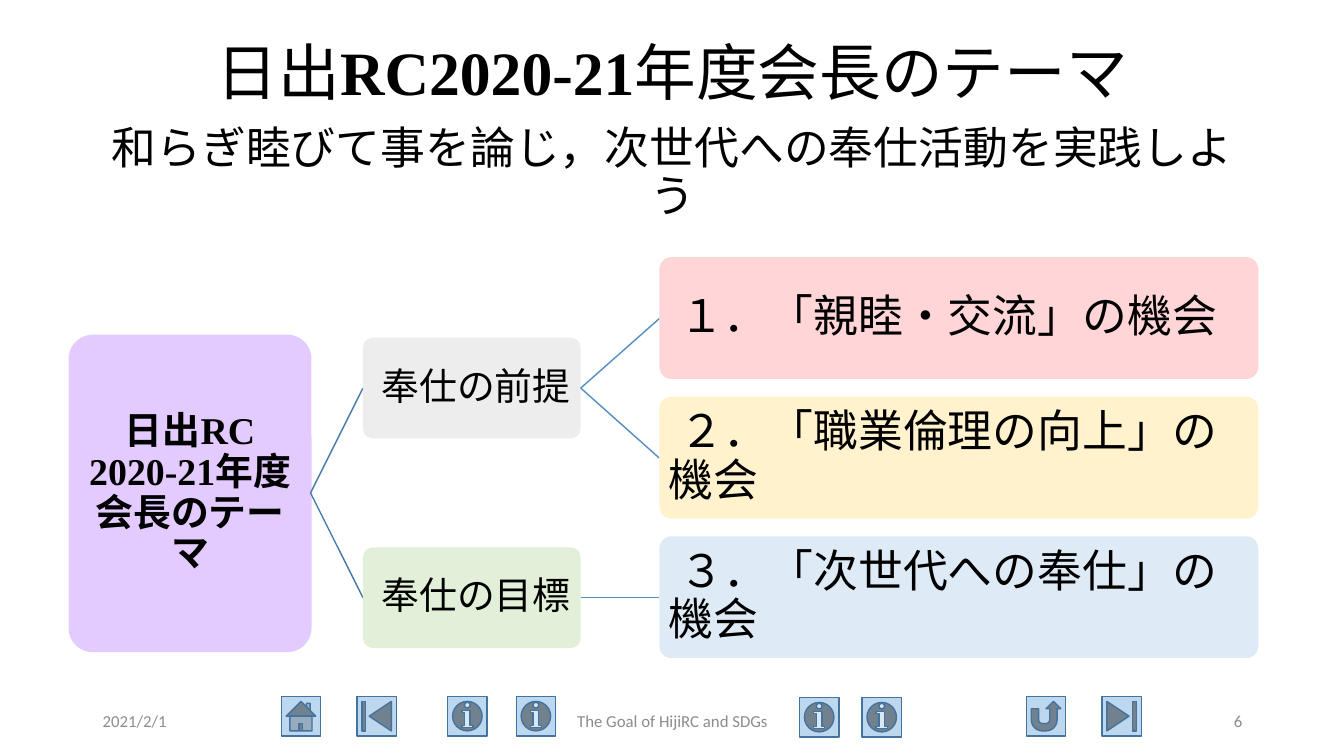
from lxml import etree
from pptx import Presentation
from pptx import util as u
from pptx.dml.color import RGBColor
from pptx.enum import shapes, text
from pptx.oxml.ns import qn

SHAPE = shapes.MSO_SHAPE
ALIGN = text.PP_ALIGN
SERIF = "Times New Roman"


def rgb(value):
    """Turn a hex string into a colour."""
    return RGBColor.from_string(value)


def add_paragraph(tf, runs, size=32, color="000000", align=ALIGN.LEFT,
                  spacing=0.9, before=0, font="Calibri", bold=False):
    """Add a paragraph of text, or of (text, font, bold) runs."""
    first = tf.paragraphs[0]
    p = tf.add_paragraph() if first.runs else first
    p.alignment, p.line_spacing, p.space_before = align, spacing, u.Pt(before)
    if isinstance(runs, str):
        runs = [(runs, font, bold)]
    for words, face, heavy in runs:
        r = p.add_run()
        r.text = words
        r.font.name, r.font.bold, r.font.size = face, heavy, u.Pt(size)
        r.font.color.rgb = rgb(color)


def set_frame(tf, inset_x, inset_y):
    """Wrap and centre a text frame vertically with the given insets."""
    tf.word_wrap = True
    tf.vertical_anchor = text.MSO_ANCHOR.MIDDLE
    tf.margin_left = tf.margin_right = u.Inches(inset_x)
    tf.margin_top = tf.margin_bottom = u.Inches(inset_y)
    return tf


def add_text_box(slide, left, top, width, height):
    """Add an empty text box and return its frame."""
    sp = slide.shapes.add_textbox(*map(u.Inches, (left, top, width, height)))
    return set_frame(sp.text_frame, 0.1, 0.05)


def add_shape(slide, kind, box, fill, line=None):
    """Add a filled preset shape."""
    sp = slide.shapes.add_shape(kind, *map(u.Inches, box))
    sp.shadow.inherit = False
    sp.fill.solid()
    sp.fill.fore_color.rgb = rgb(fill)
    if line:
        sp.line.color.rgb = rgb(line)
        sp.line.width = u.Pt(1)
    else:
        sp.line.fill.background()
    return sp


def add_node(slide, box, fill, lines, inset=0.06, **fmt):
    """Add a rounded tree node holding lines of text."""
    sp = add_shape(slide, SHAPE.ROUNDED_RECTANGLE, box, fill)
    sp.adjustments[0] = 0.1
    tf = set_frame(sp.text_frame, inset, inset)
    for line in lines:
        add_paragraph(tf, line, **fmt)


def add_branch(slide, x1, y1, x2, y2, color):
    """Draw a straight branch between two nodes."""
    c = slide.shapes.add_connector(shapes.MSO_CONNECTOR.STRAIGHT,
                                   *map(u.Inches, (x1, y1, x2, y2)))
    c.line.color.rgb = rgb(color)
    c.line.width = u.Pt(1)
    etree.SubElement(c._element.spPr, qn("a:effectLst"))


def add_buttons(slide):
    """Add the row of navigation buttons."""
    info = SHAPE.ACTION_BUTTON_INFORMATION
    for kind, left, top in [
        (SHAPE.ACTION_BUTTON_HOME, 2.79, 6.91),
        (SHAPE.ACTION_BUTTON_BEGINNING, 3.54, 6.91),
        (SHAPE.ACTION_BUTTON_RETURN, 10.18, 6.91),
        (SHAPE.ACTION_BUTTON_END, 10.93, 6.91),
        (info, 4.44, 6.91), (info, 5.12, 6.91),
        (info, 7.93, 6.92), (info, 8.55, 6.92),
    ]:
        add_shape(slide, kind, (left, top, 0.39, 0.39), "BDD7EE", "43739E")


def add_title(slide):
    """Add the heading and the theme below it."""
    tf = add_text_box(slide, 0.92, 0.4, 11.5, 1.82)
    heading = [("日出", "Calibri", False), ("RC2020-21", SERIF, True),
               ("年度会長のテーマ", "Calibri", False)]
    add_paragraph(tf, heading, size=44, align=ALIGN.CENTER)
    add_paragraph(tf, "和らぎ睦びて事を論じ，次世代への奉仕活動を実践しよう",
                  align=ALIGN.CENTER, before=12)


def add_footer(slide):
    """Add the date, footer and slide number."""
    for words, left, width, align in [
        ("2021/2/1", 0.92, 3, ALIGN.LEFT),
        ("The Goal of HijiRC and SDGs", 4.42, 4.5, ALIGN.CENTER),
        ("6", 9.42, 3, ALIGN.RIGHT),
    ]:
        tf = add_text_box(slide, left, 6.95, width, 0.4)
        add_paragraph(tf, words, size=12, color="8C8C8C", align=align, spacing=1)


def add_tree(slide):
    """Add the theme, its two aims and their opportunities."""
    aims = [
        (" 奉仕の前提", "EDEDED", 3.85,
         [(" １．「親睦・交流」の機会", "FFD5D7"),
          (" ２．「職業倫理の向上」の機会", "FFF2CC")]),
        (" 奉仕の目標", "E2F0D9", 5.93,
         [(" ３．「次世代への奉仕」の機会", "DEEBF7")]),
    ]
    add_node(slide, (0.68, 3.32, 2.41, 3.15), "E3CBFF",
             ["日出RC", "2020-21年度会長のテーマ"], inset=0.09,
             size=27, align=ALIGN.CENTER, font=SERIF, bold=True)
    leaf_y = 3.16
    for aim, aim_fill, aim_y, leaves in aims:
        add_branch(slide, 3.08, 4.89, 3.6, aim_y, "497CAB")
        add_node(slide, (3.6, aim_y - 0.5, 2.16, 1), aim_fill, [aim],
                 inset=0.05, size=27, align=ALIGN.CENTER)
        for leaf, leaf_fill in leaves:
            add_branch(slide, 5.76, aim_y, 6.54, leaf_y, "538DC1")
            add_node(slide, (6.54, leaf_y - 0.61, 5.94, 1.21), leaf_fill, [leaf])
            leaf_y += 1.385


def main():
    """Build the slide and save it."""
    prs = Presentation()
    prs.slide_width, prs.slide_height = u.Inches(13.33), u.Inches(7.5)
    slide = prs.slides.add_slide(prs.slide_layouts[6])
    add_buttons(slide)
    add_title(slide)
    add_footer(slide)
    add_tree(slide)
    prs.save("out.pptx")


if __name__ == "__main__":
    main()
